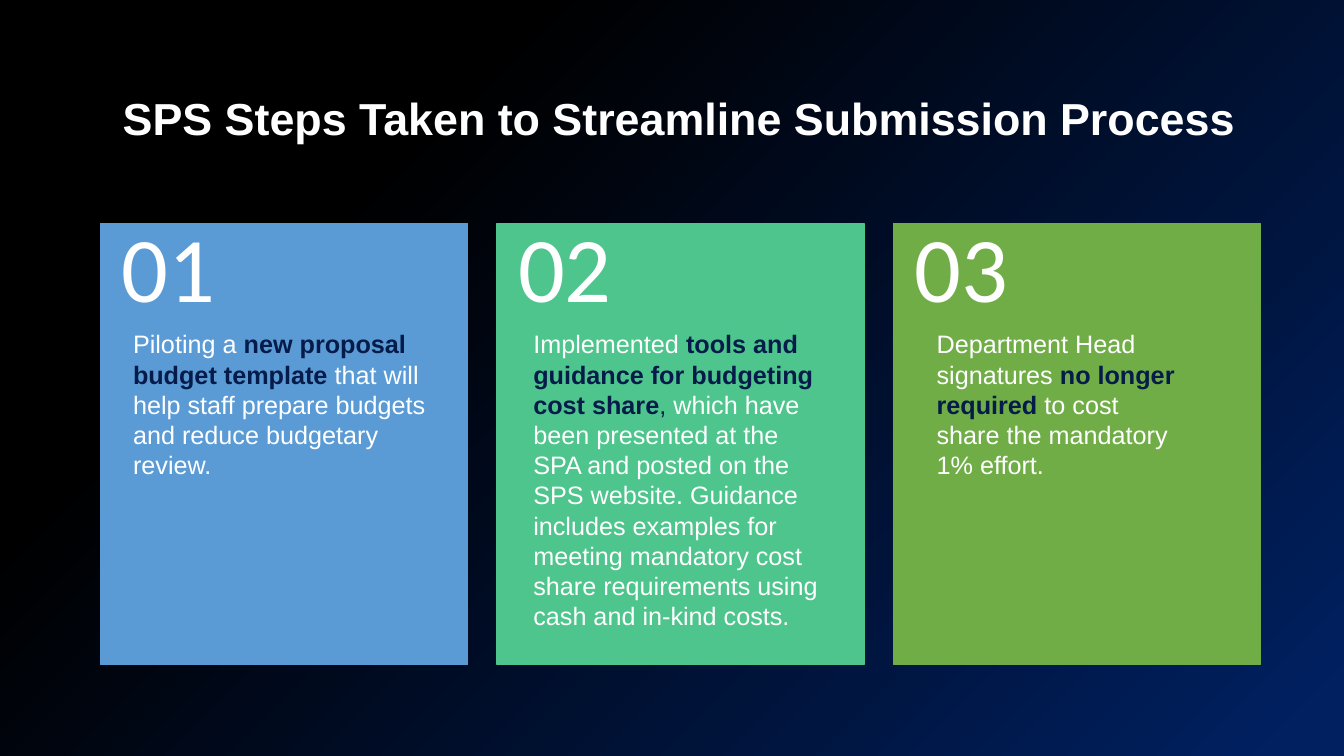
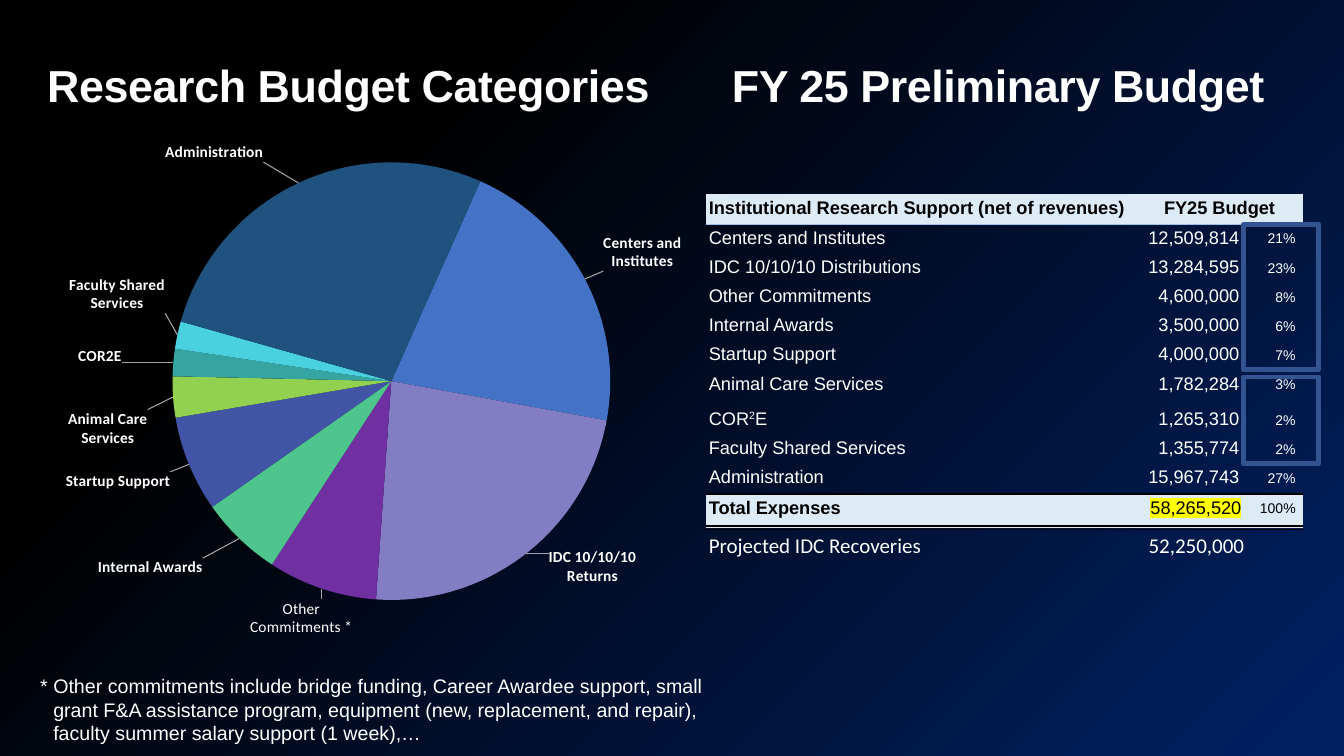
from dataclasses import dataclass
from typing import Optional

from lxml.etree import SubElement
from pptx import Presentation
from pptx.chart.data import CategoryChartData
from pptx.dml.color import RGBColor
from pptx.enum.chart import XL_CHART_TYPE, XL_LABEL_POSITION
from pptx.enum.shapes import MSO_CONNECTOR, MSO_SHAPE
from pptx.enum.text import MSO_ANCHOR, PP_ALIGN
from pptx.oxml import parse_xml
from pptx.oxml.ns import nsdecls, qn
from pptx.util import Emu, Pt

PX = 9144
WHITE, BLACK, NAVY = "FFFFFF", "000000", "051B49"
PALE, SKY, FRAME, GRAY, YELLOW = "DDEBF7", "9BC2E6", "325491", "A6A6A6", "FFFF00"
NO_TABLE_STYLE = "{2D5ABB26-0587-4C30-8999-92F81FD0307C}"


@dataclass
class Span:
    text: str
    color: str = WHITE
    bold: bool = False
    superscript: bool = False
    highlight: Optional[str] = None


@dataclass
class Card:
    fill: str
    body_left: int
    body_width: int
    spans: list[Span]


@dataclass
class BudgetRow:
    label: list[Span]
    amount: Span
    percent: Span
    height: int = 29
    fill: Optional[str] = None
    font: str = "Arial"
    size: int = 13
    bottom: int = 6
    amount_right: int = 6


@dataclass
class Slice:
    category: str
    value: int
    color: str
    shift: tuple[float, float]
    bold: bool = True


CARDS = [
    Card("5B9BD5", 96, 364, [
        Span("Piloting a "), Span("new proposal budget template ", NAVY, True),
        Span("that will help staff prepare budgets and reduce budgetary review.")]),
    Card("4DC58D", 493, 364, [
        Span("Implemented "),
        Span("tools and guidance for budgeting cost share", NAVY, True), Span(",", NAVY),
        Span(" which have been presented at the SPA and posted on the SPS website. "
             "Guidance includes examples for meeting mandatory cost share requirements "
             "using cash and in-kind costs.")]),
    Card("70AD47", 893, 317, [
        Span("Department Head signatures "), Span("no longer required ", NAVY, True),
        Span("to cost share the mandatory 1% effort.")]),
]


def body_row(label: str, amount: str, percent: str) -> BudgetRow:
    return BudgetRow([Span(label)], Span(amount), Span(percent))


BUDGET = [
    BudgetRow([Span("Institutional Research Support (net of revenues)", BLACK, True)],
              Span("FY25 Budget", BLACK, True), Span(""), height=31, fill=PALE),
    body_row("Centers and Institutes", "12,509,814", "21%"),
    body_row("IDC 10/10/10 Distributions", "13,284,595", "23%"),
    body_row("Other Commitments", "4,600,000", "8%"),
    body_row("Internal Awards", "3,500,000", "6%"),
    body_row("Startup Support", "4,000,000", "7%"),
    body_row("Animal Care Services", "1,782,284", "3%"),
    BudgetRow([Span("COR"), Span("2", superscript=True), Span("E")],
              Span("1,265,310"), Span("2%"), height=35),
    body_row("Faculty Shared Services", "1,355,774", "2%"),
    body_row("Administration", "15,967,743", "27%"),
    BudgetRow([Span("Total Expenses", BLACK, True)],
              Span("58,265,520", BLACK, highlight=YELLOW), Span("100%", BLACK),
              height=34, fill=PALE, bottom=10, amount_right=4),
    BudgetRow([Span("Projected IDC Recoveries")], Span("52,250,000"), Span(""),
              height=35, font="Calibri", size=15, bottom=4, amount_right=1),
]

SLICES = [
    Slice("Centers and Institutes", 21, "4472C4", (0.02, -0.01)),
    Slice("IDC 10/10/10 Returns", 23, "837EC4", (0.03, -0.02)),
    Slice("Other Commitments *", 8, "7030A1", (0.05, 0.01), bold=False),
    Slice("Internal Awards", 6, "4EC58D", (-0.05, 0.03)),
    Slice("Startup Support", 7, "4154A5", (-0.02, 0.01)),
    Slice("Animal Care Services", 3, "92D050", (-0.03, 0.06)),
    Slice("COR2E", 2, "36A4A0", (-0.07, -0.01)),
    Slice("Faculty Shared Services", 2, "49D1DF", (-0.01, -0.04)),
    Slice("Administration", 27, "1F527F", (-0.05, -0.03)),
]


def px(length: int) -> Emu:
    return Emu(length * PX)


def rgb(value: str) -> RGBColor:
    return RGBColor.from_string(value)


def write_spans(para, spans: list[Span], size: int, font: str = "Arial") -> None:
    for span in spans:
        run = para.add_run()
        run.text = span.text
        run.font.size, run.font.name, run.font.bold = Pt(size), font, span.bold
        run.font.color.rgb = rgb(span.color)
        properties = run.font._element
        if span.superscript:
            properties.set("baseline", "30000")
        if span.highlight:
            properties.find(qn("a:solidFill")).addnext(parse_xml(
                f'<a:highlight {nsdecls("a")}><a:srgbClr val="{span.highlight}"/></a:highlight>'))


def add_text(page, left: int, top: int, width: int, height: int, spans: list[Span],
             size: int, font: str = "Arial", insets=(10, 5, 10, 5),
             anchor=MSO_ANCHOR.TOP, spacing: float = 1.0):
    box = page.shapes.add_textbox(px(left), px(top), px(width), px(height))
    frame = box.text_frame
    frame.word_wrap = True
    frame.vertical_anchor = anchor
    (frame.margin_left, frame.margin_top,
     frame.margin_right, frame.margin_bottom) = map(px, insets)
    para = frame.paragraphs[0]
    para.line_spacing = spacing
    write_spans(para, spans, size, font)
    return para


def add_title(page, text: str, left: int, top: int, width: int, height: int,
              anchor=MSO_ANCHOR.TOP, tracking: int = 0):
    para = add_text(page, left, top, width, height, [Span(text, bold=True)], 32,
                    anchor=anchor, spacing=0.9)
    para.runs[0].font._element.set("spc", str(tracking))
    return para


def add_rectangle(page, left: int, top: int, width: int, height: int,
                  fill: Optional[str], line: str, weight: float) -> None:
    shape = page.shapes.add_shape(MSO_SHAPE.RECTANGLE, px(left), px(top), px(width), px(height))
    shape.shadow.inherit = False
    if fill:
        shape.fill.solid()
        shape.fill.fore_color.rgb = rgb(fill)
    else:
        shape.fill.background()
    shape.line.color.rgb = rgb(line)
    shape.line.width = Pt(weight)


def add_rule(page, left: int, top: int, width: int, color: str, weight: float) -> None:
    rule = page.shapes.add_connector(MSO_CONNECTOR.STRAIGHT, px(left), px(top),
                                     px(left + width), px(top))
    rule.line.color.rgb = rgb(color)
    rule.line.width = Pt(weight)
    SubElement(rule._element.spPr, qn("a:effectLst"))


def fill_cell(cell, spans: list[Span], row: BudgetRow, size: int, align,
              right: int, bottom: int) -> None:
    cell.margin_left, cell.margin_top = px(3), px(0)
    cell.margin_right, cell.margin_bottom = px(right), px(bottom)
    cell.vertical_anchor = MSO_ANCHOR.BOTTOM
    if row.fill:
        cell.fill.solid()
        cell.fill.fore_color.rgb = rgb(row.fill)
    else:
        cell.fill.background()
    para = cell.text_frame.paragraphs[0]
    para.alignment = align
    para.font.size = Pt(size)
    write_spans(para, spans, size, row.font)


def add_budget_table(page, left: int, top: int) -> None:
    widths = (430, 105, 57)
    total = sum(widths)
    height = sum(row.height for row in BUDGET)
    table = page.shapes.add_table(len(BUDGET), len(widths), px(left), px(top),
                                  px(total), px(height)).table
    table.first_row = table.horz_banding = False
    table._tbl.tblPr.find(qn("a:tableStyleId")).text = NO_TABLE_STYLE
    for column, width in zip(table.columns, widths):
        column.width = px(width)
    for index, row in enumerate(BUDGET):
        table.rows[index].height = px(row.height)
        label, amount, percent = table.rows[index].cells
        amount_align = PP_ALIGN.RIGHT if index else PP_ALIGN.CENTER
        fill_cell(label, row.label, row, row.size, PP_ALIGN.LEFT, 0, row.bottom)
        fill_cell(amount, [row.amount], row, row.size, amount_align,
                  row.amount_right, row.bottom)
        fill_cell(percent, [row.percent] if row.percent.text else [], row, 10,
                  PP_ALIGN.RIGHT, 7, row.bottom + 1)
    table.cell(0, 1).merge(table.cell(0, 2))
    for offset, color, weight in ((31, SKY, 1), (298, BLACK, 1.5),
                                  (330, BLACK, 1.5), (333, BLACK, 0.75)):
        add_rule(page, left, top + offset, total, color, weight)


def manual_layout(parts: str) -> object:
    return parse_xml(f'<c:layout {nsdecls("c")}><c:manualLayout>{parts}</c:manualLayout></c:layout>')


def add_pie(page, left: int, top: int, width: int, height: int) -> None:
    data = CategoryChartData()
    data.categories = [item.category for item in SLICES]
    data.add_series("Series 1", [item.value for item in SLICES])
    chart = page.shapes.add_chart(XL_CHART_TYPE.PIE, px(left), px(top),
                                  px(width), px(height), data).chart
    chart.has_legend = chart.has_title = False
    chart.font.size, chart.font.name = Pt(10), "Calibri"
    plot = chart.plots[0]
    plot.vary_by_categories = True
    SubElement(plot._element, qn("c:firstSliceAng")).set("val", "24")
    for extra in plot._element.findall(qn("c:firstSliceAng"))[:-1]:
        plot._element.remove(extra)
    area = chart._chartSpace.chart.plotArea
    for old in area.findall(qn("c:layout")):
        area.remove(old)
    area.insert(0, manual_layout(
        '<c:layoutTarget val="inner"/><c:xMode val="edge"/><c:yMode val="edge"/>'
        '<c:x val="0.19"/><c:y val="0.05"/><c:w val="0.67"/><c:h val="0.85"/>'))
    series = plot.series[0]
    for index, item in enumerate(SLICES):
        point = series.points[index]
        point.format.fill.solid()
        point.format.fill.fore_color.rgb = rgb(item.color)
        font = point.data_label.font
        font.size, font.name, font.bold = Pt(11), "Calibri", item.bold
        font.color.rgb = rgb(WHITE)
        point.data_label.position = XL_LABEL_POSITION.OUTSIDE_END
    labels = series._element.find(qn("c:dLbls"))
    for item, label in zip(SLICES, labels.findall(qn("c:dLbl"))):
        label.find(qn("c:showVal")).set("val", "0")
        label.find(qn("c:showCatName")).set("val", "1")
        x, y = item.shift
        label.find(qn("c:idx")).addnext(manual_layout(f'<c:x val="{x}"/><c:y val="{y}"/>'))
    for old in labels.findall(qn("c:showLeaderLines")):
        labels.remove(old)
    SubElement(labels, qn("c:showLeaderLines")).set("val", "1")
    labels.append(parse_xml(
        f'<c:leaderLines {nsdecls("c", "a")}><c:spPr><a:ln w="9525"><a:solidFill>'
        f'<a:srgbClr val="{GRAY}"/></a:solidFill></a:ln></c:spPr></c:leaderLines>'))


def set_background(deck) -> None:
    fill = deck.slide_master.background.fill
    fill.gradient()
    fill.gradient_angle = 315
    for stop, position, color in zip(fill.gradient_stops, (0.26, 0.97), (BLACK, "002060")):
        stop.position = position
        stop.color.rgb = rgb(color)


def build_steps(page) -> None:
    for index, card in enumerate(CARDS):
        left = 100 + 393 * index
        add_rectangle(page, left, 222, 364, 437, card.fill, card.fill, 1)
        body = add_text(page, card.body_left, 326, card.body_width, 262, card.spans, 18,
                        insets=(36, 0, 36, 36))
        body.space_after = Pt(12)
        add_text(page, left - 15, 183, 364, 175, [Span(f"{index + 1:02d}")], 66, "Calibri",
                 (36, 18, 36, 18), MSO_ANCHOR.MIDDLE, 0.9)
    title = add_title(page, "SPS Steps Taken to Streamline Submission Process",
                      100, 91, 1148, 101)
    title.alignment = PP_ALIGN.CENTER


def build_budget(page) -> None:
    add_title(page, "Research Budget Categories", 37, 58, 645, 145, tracking=-30)
    add_title(page, "FY 25 Preliminary Budget", 716, 15, 592, 145, MSO_ANCHOR.MIDDLE, -30)
    add_budget_table(page, 700, 192)
    note = add_text(page, 30, 664, 709, 81, [Span(
        "* Other commitments include bridge funding, Career Awardee support, small grant F&A "
        "assistance program, equipment (new, replacement, and repair), faculty summer salary "
        "support (1 week),…")], 14)
    properties = note._p.get_or_add_pPr()
    properties.set("marL", str(px(13)))
    properties.set("indent", str(px(-13)))
    add_pie(page, 48, 135, 648, 512)
    for top, height in ((223, 144), (374, 86)):
        add_rectangle(page, 1233, top, 75, height, None, FRAME, 3.5)


def main() -> None:
    deck = Presentation()
    deck.slide_width, deck.slide_height = px(1333), px(750)
    set_background(deck)
    for build in (build_steps, build_budget):
        build(deck.slides.add_slide(deck.slide_layouts[6]))
    deck.save("out.pptx")


if __name__ == "__main__":
    main()
